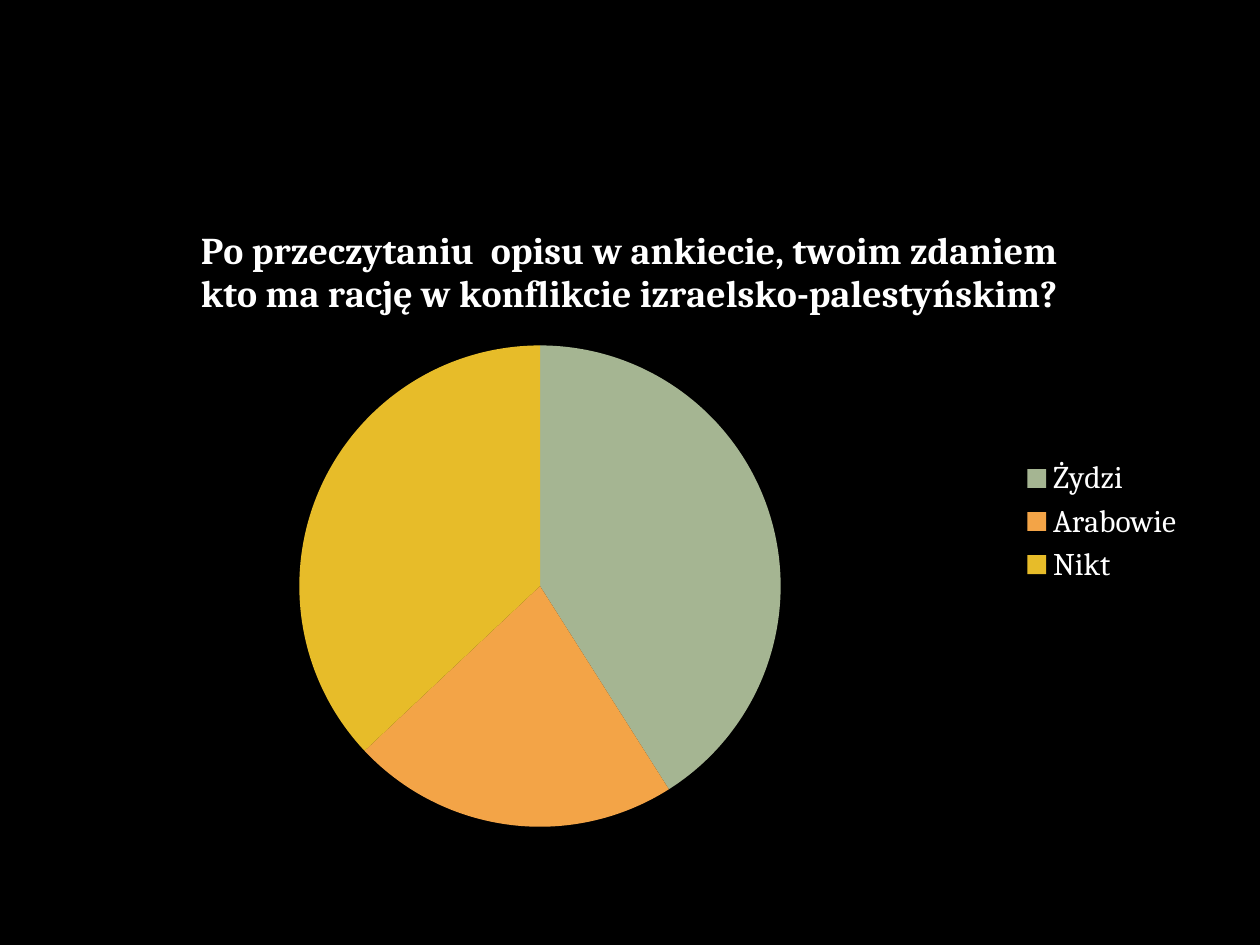
import pptx
import pptx.chart.data
import pptx.dml.color
import pptx.enum.chart
import pptx.util
from pptx.util import Inches

QUESTION = ("Po przeczytaniu  opisu w ankiecie, twoim zdaniem "
            "kto ma rację w konflikcie izraelsko-palestyńskim?")
ANSWERS = [("Żydzi", 41, "A5B592"), ("Arabowie", 22, "F3A447"), ("Nikt", 37, "E7BC29")]


def paint(fill, color):
    """Give a fill one solid colour from a hex string."""
    fill.solid()
    fill.fore_color.rgb = pptx.dml.color.RGBColor.from_string(color)


def style_font(font, size, bold=False):
    """Set white Cambria at the given size in points."""
    font.name = "Cambria"
    font.size = pptx.util.Pt(size)
    font.bold = bold
    paint(font.fill, "FFFFFF")


def add_answer_pie(slide, left, top, width, height):
    """Add the pie of survey answers with its question and legend."""
    survey = pptx.chart.data.CategoryChartData()
    survey.categories = [answer for answer, share, color in ANSWERS]
    survey.add_series("Series 1", [share for answer, share, color in ANSWERS])
    pie = slide.shapes.add_chart(
        pptx.enum.chart.XL_CHART_TYPE.PIE, left, top, width, height, survey).chart
    style_font(pie.font, 18)

    pie.has_title = True
    question = pie.chart_title.text_frame
    question.text = QUESTION
    style_font(question.paragraphs[0].font, 21.6, bold=True)
    pie.chart_title.include_in_layout = False

    pie.has_legend = True
    pie.legend.position = pptx.enum.chart.XL_LEGEND_POSITION.RIGHT
    pie.legend.include_in_layout = False
    style_font(pie.legend.font, 18)

    pie.plots[0].vary_by_categories = True
    slices = pie.plots[0].series[0].points
    for index, (answer, share, color) in enumerate(ANSWERS):
        paint(slices[index].format.fill, color)
        slices[index].format.line.fill.background()


def main():
    """Build the survey slide and save it."""
    deck = pptx.Presentation()
    deck.slide_width, deck.slide_height = Inches(10), Inches(7.5)
    slide = deck.slides.add_slide(deck.slide_layouts[6])
    paint(slide.background.fill, "000000")
    add_answer_pie(slide, Inches(0.5), Inches(1.58), Inches(9), Inches(5.12))
    deck.save("out.pptx")


if __name__ == "__main__":
    main()
